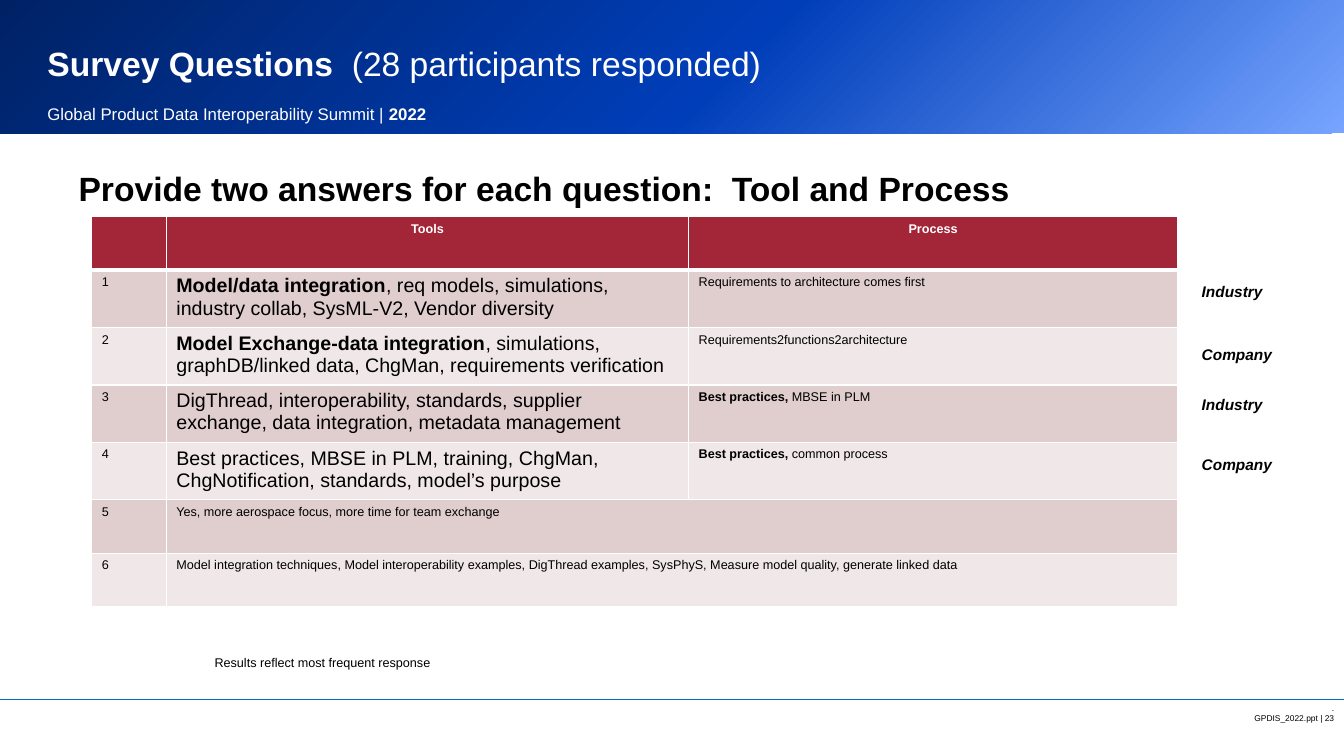
from copy import deepcopy

from lxml.etree import SubElement
from pptx import Presentation
from pptx.dml.color import RGBColor
from pptx.enum.shapes import MSO_CONNECTOR, MSO_SHAPE
from pptx.enum.text import MSO_ANCHOR, MSO_AUTO_SIZE, PP_ALIGN
from pptx.oxml.ns import qn
from pptx.util import Inches, Pt

WHITE = RGBColor(0xFF, 0xFF, 0xFF)
BLACK = RGBColor(0x00, 0x00, 0x00)
LIGHT_BLUE = RGBColor(0x76, 0xA4, 0xFF)
MID_BLUE = RGBColor(0x00, 0x3E, 0xB9)
DARK_BLUE = RGBColor(0x00, 0x22, 0x65)
RULE_BLUE = RGBColor(0x00, 0x70, 0xC0)
HEADER_RED = RGBColor(0xA3, 0x26, 0x38)
ROSE = RGBColor(0xE0, 0xCD, 0xCE)
PALE_ROSE = RGBColor(0xF0, 0xE8, 0xE8)


def write(paragraph, bold_text, plain_text, size, color, align=PP_ALIGN.LEFT):
    """Fill a paragraph with a bold lead and a plain continuation."""
    for text, bold in ((bold_text, True), (plain_text, False)):
        if text:
            run = paragraph.add_run()
            run.text = text
            run.font.bold = bold
    paragraph.font.name = "Arial"
    paragraph.font.size = Pt(size)
    paragraph.font.color.rgb = color
    paragraph.alignment = align


def add_text_frame(left, top, width, height, wrap=True, insets=(0.1, 0.05, 0.1, 0.05)):
    box = slide.shapes.add_textbox(Inches(left), Inches(top), Inches(width), Inches(height))
    frame = box.text_frame
    frame.word_wrap = wrap
    frame.margin_left, frame.margin_top, frame.margin_right, frame.margin_bottom = map(Inches, insets)
    return frame


prs = Presentation()
prs.slide_width, prs.slide_height = Inches(13.33), Inches(7.5)
slide = prs.slides.add_slide(prs.slide_layouts[5])

# Gradient banner
banner = slide.shapes.add_shape(MSO_SHAPE.RECTANGLE, 0, 0, prs.slide_width, Inches(1.32))
banner.shadow.inherit = False
banner.line.fill.background()
banner.fill.gradient()
banner.fill.gradient_angle = 135
stop_list = banner._element.spPr.find(".//" + qn("a:gsLst"))
stop_list.insert(1, deepcopy(stop_list[0]))
gradient = ((0, LIGHT_BLUE), (0.46, MID_BLUE), (1, DARK_BLUE))
for stop, (position, color) in zip(banner.fill.gradient_stops, gradient):
    stop.position = position
    stop.color.rgb = color

# Event name, with the year in bold
event = add_text_frame(0, 0.98, 13.33, 0.3, insets=(0.47, 0.05, 0.5, 0.05)).paragraphs[0]
write(event, "", "Global Product Data Interoperability Summit | ", 12, WHITE)
write(event, "2022", "", 12, WHITE)

# Footer
footer = add_text_frame(9.29, 6.93, 4.04, 0.3)
write(footer.paragraphs[0], "", ".", 6, BLACK, PP_ALIGN.RIGHT)
write(footer.add_paragraph(), "", "GPDIS_2022.ppt | 23", 6, BLACK, PP_ALIGN.RIGHT)
footer_rule = slide.shapes.add_connector(
    MSO_CONNECTOR.STRAIGHT, 0, Inches(6.94), prs.slide_width, Inches(6.94))
footer_rule.line.color.rgb = RULE_BLUE
footer_rule.line.width = Pt(0.5)
SubElement(footer_rule._element.spPr, qn("a:effectLst"))

# Title, brought in front of the banner
title = slide.shapes.title
title.left, title.top = 0, Inches(0.21)
title.width, title.height = prs.slide_width, Inches(0.62)
slide.shapes._spTree.append(title._element)
title_frame = title.text_frame
title_frame.auto_size = MSO_AUTO_SIZE.NONE
title_frame.word_wrap = True
title_frame.vertical_anchor = MSO_ANCHOR.MIDDLE
title_frame.margin_left, title_frame.margin_right = Inches(0.47), Inches(0.5)
title_frame.margin_top, title_frame.margin_bottom = Inches(0.25), 0
write(title_frame.paragraphs[0], "Survey Questions  ", "(28 participants responded)", 24, WHITE)
title_frame.paragraphs[0].line_spacing = Pt(26)

# Instruction above the table
instruction = add_text_frame(0.31, 1.47, 12.73, 0.65, insets=(0.47, 0.2, 0.5, 0.05))
write(instruction.paragraphs[0],
      "Provide two answers for each question:  Tool and Process", "", 24, BLACK)

# Answers: (bold lead, plain text) for tools, then for process
answers = [
    (("Model/data integration",
      ", req models, simulations, industry collab, SysML-V2, Vendor diversity"),
     ("", "Requirements to architecture comes first")),
    (("Model Exchange-data integration",
      ", simulations, graphDB/linked data, ChgMan, requirements verification"),
     ("", "Requirements2functions2architecture")),
    (("", "DigThread, interoperability, standards, supplier exchange, data integration, "
          "metadata management"),
     ("Best practices, ", "MBSE in PLM")),
    (("", "Best practices, MBSE in PLM, training, ChgMan, ChgNotification, standards, "
          "model’s purpose"),
     ("Best practices, ", "common process")),
    (("", "Yes, more aerospace focus, more time for team exchange"), None),
    (("", "Model integration techniques, Model interoperability examples, DigThread examples, "
          "SysPhyS, Measure model quality, generate linked data"), None),
]
column_widths = (0.74, 5.18, 4.85)
row_heights = [0.53] + [0.57] * 4 + [0.53] * 2
table = slide.shapes.add_table(
    len(row_heights), len(column_widths), Inches(0.91), Inches(2.15),
    Inches(sum(column_widths)), Inches(sum(row_heights))).table
for column, width in zip(table.columns, column_widths):
    column.width = Inches(width)
for row, height in zip(table.rows, row_heights):
    row.height = Inches(height)

for column, heading in enumerate(("Tools", "Process"), start=1):
    write(table.cell(0, column).text_frame.paragraphs[0], heading, "", 9, WHITE, PP_ALIGN.CENTER)
for number, (tools, process) in enumerate(answers, start=1):
    number_cell, tools_cell, process_cell = table.rows[number].cells
    write(number_cell.text_frame.paragraphs[0], "", str(number), 9, BLACK)
    write(tools_cell.text_frame.paragraphs[0], *tools, 14 if process else 9, BLACK)
    if process:
        write(process_cell.text_frame.paragraphs[0], *process, 9, BLACK)
    else:
        tools_cell.merge(process_cell)

# Row bands and white borders, thicker under the header
for index, row in enumerate(table.rows):
    band = HEADER_RED if index == 0 else ROSE if index % 2 else PALE_ROSE
    for cell in row.cells:
        cell.fill.solid()
        cell.fill.fore_color.rgb = band
        properties = cell._tc.get_or_add_tcPr()
        for place, side in enumerate("LRTB"):
            thick = (index, side) in ((0, "B"), (1, "T"))
            border = SubElement(properties, qn("a:ln" + side), w=str(Pt(3 if thick else 1)))
            SubElement(SubElement(border, qn("a:solidFill")), qn("a:srgbClr"), val=str(WHITE))
            properties.insert(place, border)

# Respondent group beside each of the first four rows
for group, top, width in (("Industry", 2.75, 0.81), ("Company", 3.37, 0.91),
                          ("Industry", 3.87, 0.81), ("Company", 4.47, 0.91)):
    label = add_text_frame(11.82, top, width, 0.29, wrap=False).paragraphs[0]
    write(label, group, "", 11, BLACK)
    label.font.italic = True

# Note below the table
note = add_text_frame(2.03, 6.45, 2.36, 0.25, wrap=False)
write(note.paragraphs[0], "", "Results reflect most frequent response", 9, BLACK)

prs.save("out.pptx")
